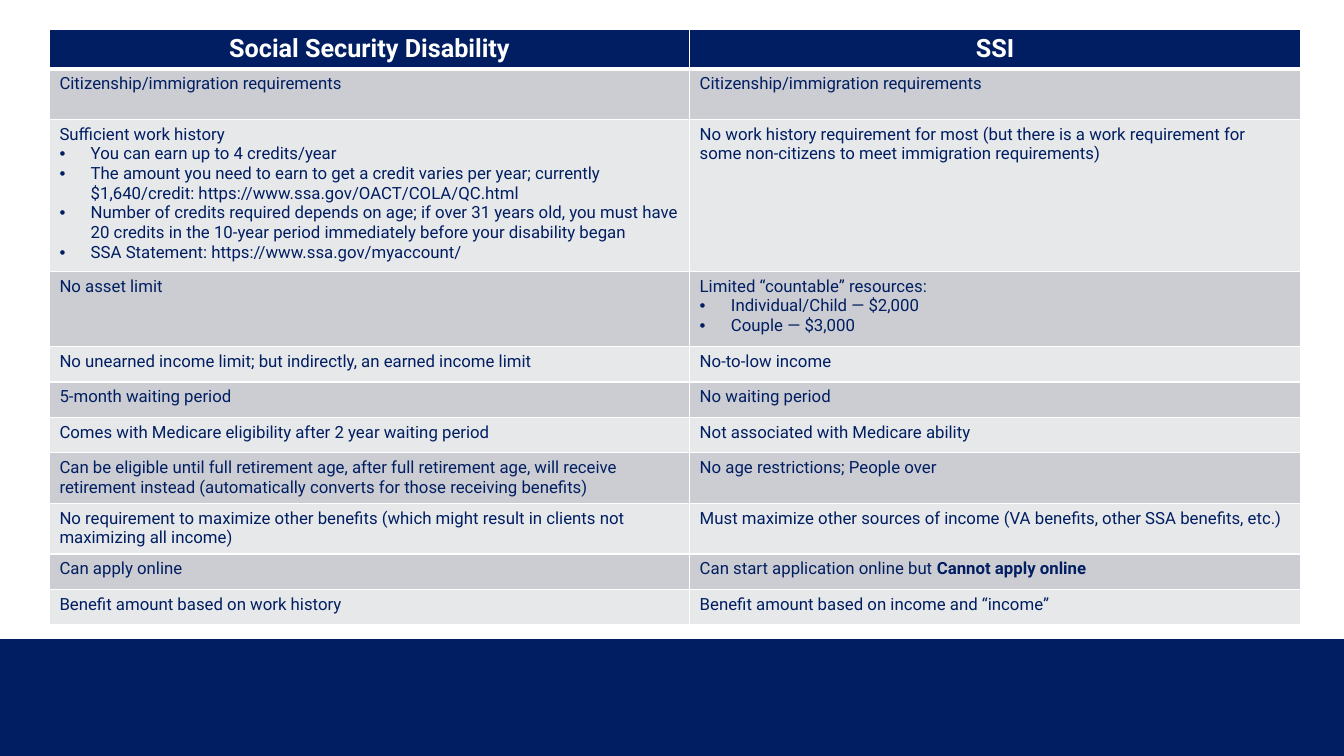
from dataclasses import dataclass
from lxml.etree import SubElement
from pptx import Presentation
from pptx.dml.color import RGBColor
from pptx.enum.shapes import MSO_SHAPE
from pptx.enum.text import PP_ALIGN
from pptx.oxml.ns import qn
from pptx.util import Inches, Pt

HEADS = ("Social Security Disability", "SSI")
ROWS = [
    (50, "Citizenship/immigration requirements", "Citizenship/immigration requirements"),
    (150, ["Sufficient work history",
           "You can earn up to 4 credits/year",
           "The amount you need to earn to get a credit varies per year; currently "
           "$1,640/credit: https://www.ssa.gov/OACT/COLA/QC.html",
           "Number of credits required depends on age; if over 31 years old, you must have "
           "20 credits in the 10-year period immediately before your disability began",
           "SSA Statement: https://www.ssa.gov/myaccount/"],
     "No work history requirement for most (but there is a work requirement for "
     "some non-citizens to meet immigration requirements)"),
    (74, "No asset limit",
     ["Limited “countable” resources:", "Individual/Child — $2,000", "Couple — $3,000"]),
    (35, "No unearned income limit; but indirectly, an earned income limit", "No-to-low income"),
    (35, "5-month waiting period", "No waiting period"),
    (35, "Comes with Medicare eligibility after 2 year waiting period",
     "Not associated with Medicare ability"),
    (50, "Can be eligible until full retirement age, after full retirement age, will receive "
     "retirement instead (automatically converts for those receiving benefits)",
     "No age restrictions; People over"),
    (50, "No requirement to maximize other benefits (which might result in clients not "
     "maximizing all income)",
     "Must maximize other sources of income (VA benefits, other SSA benefits, etc.)"),
    (35, "Can apply online", ("Can start application online but ", "Cannot apply online")),
    (35, "Benefit amount based on work history", "Benefit amount based on income and “income”"),
]
HEAD_PART = 38
COLS = (6.35, 6.06)
LEFT, TOP, HIGH = 0.49, 0.29, 5.9
BAND_TOP = 6.34


@dataclass(frozen=True)
class Theme:
    navy: str = "001E61"
    white: str = "FFFFFF"
    bands: tuple = ("CCCDD2", "E7E8EA")
    font: str = "Roboto"
    head: int = 18
    body: int = 12
    rule: int = 1
    thick: int = 3
    indent: float = 0.31


THEME = Theme()


def color(code):
    return RGBColor.from_string(code)


def border(cell, side, width):
    line = SubElement(cell._tc.get_or_add_tcPr(), qn(f"a:ln{side}"), w=str(Pt(width)))
    fill = SubElement(line, qn("a:solidFill"))
    SubElement(fill, qn("a:srgbClr"), val=THEME.white)


def bullet(para):
    props = para._p.get_or_add_pPr()
    gap = Inches(THEME.indent)
    props.set("marL", str(gap))
    props.set("indent", str(-gap))
    SubElement(props, qn("a:buFont"), typeface="Arial")
    SubElement(props, qn("a:buChar"), char="•")


def write(para, text, size, ink, bold):
    run = para.add_run()
    run.text = text
    run.font.name = THEME.font
    run.font.size = Pt(size)
    run.font.bold = bold
    run.font.color.rgb = color(ink)


def paint(cell, fill, head):
    for side in "LRTB":
        heavy = side == ("B" if head else None)
        border(cell, side, THEME.thick if heavy else THEME.rule)
    cell.fill.solid()
    cell.fill.fore_color.rgb = color(fill)


def fill_head(cell, text):
    paint(cell, THEME.navy, True)
    para = cell.text_frame.paragraphs[0]
    para.alignment = PP_ALIGN.CENTER
    write(para, text, THEME.head, THEME.white, True)


def fill_body(cell, entry, band):
    paint(cell, band, False)
    frame = cell.text_frame
    for i, item in enumerate(entry if isinstance(entry, list) else [entry]):
        para = frame.add_paragraph() if i else frame.paragraphs[0]
        if i:
            bullet(para)
        parts = item if isinstance(item, tuple) else (item,)
        for j, text in enumerate(parts):
            write(para, text, THEME.body, THEME.navy, j > 0)


def add_band(slide, deck):
    top = Inches(BAND_TOP)
    band = slide.shapes.add_shape(
        MSO_SHAPE.RECTANGLE, 0, top, deck.slide_width, deck.slide_height - top)
    band.shadow.inherit = False
    band.fill.solid()
    band.fill.fore_color.rgb = color(THEME.navy)
    band.line.fill.background()


def add_grid(slide):
    table = slide.shapes.add_table(
        len(ROWS) + 1, len(COLS), Inches(LEFT), Inches(TOP),
        Inches(sum(COLS)), Inches(HIGH)).table
    table.horz_banding = False
    for col, width in zip(table.columns, COLS):
        col.width = Inches(width)
    parts = [HEAD_PART] + [row[0] for row in ROWS]
    for row, part in zip(table.rows, parts):
        row.height = Inches(HIGH * part / sum(parts))
    for c, text in enumerate(HEADS):
        fill_head(table.cell(0, c), text)
    for r, (_, *pair) in enumerate(ROWS):
        for c, entry in enumerate(pair):
            fill_body(table.cell(r + 1, c), entry, THEME.bands[r % 2])


def main():
    deck = Presentation()
    deck.slide_width, deck.slide_height = Inches(13.33), Inches(7.5)
    slide = deck.slides.add_slide(deck.slide_layouts[6])
    add_band(slide, deck)
    add_grid(slide)
    deck.save("out.pptx")


if __name__ == "__main__":
    main()
